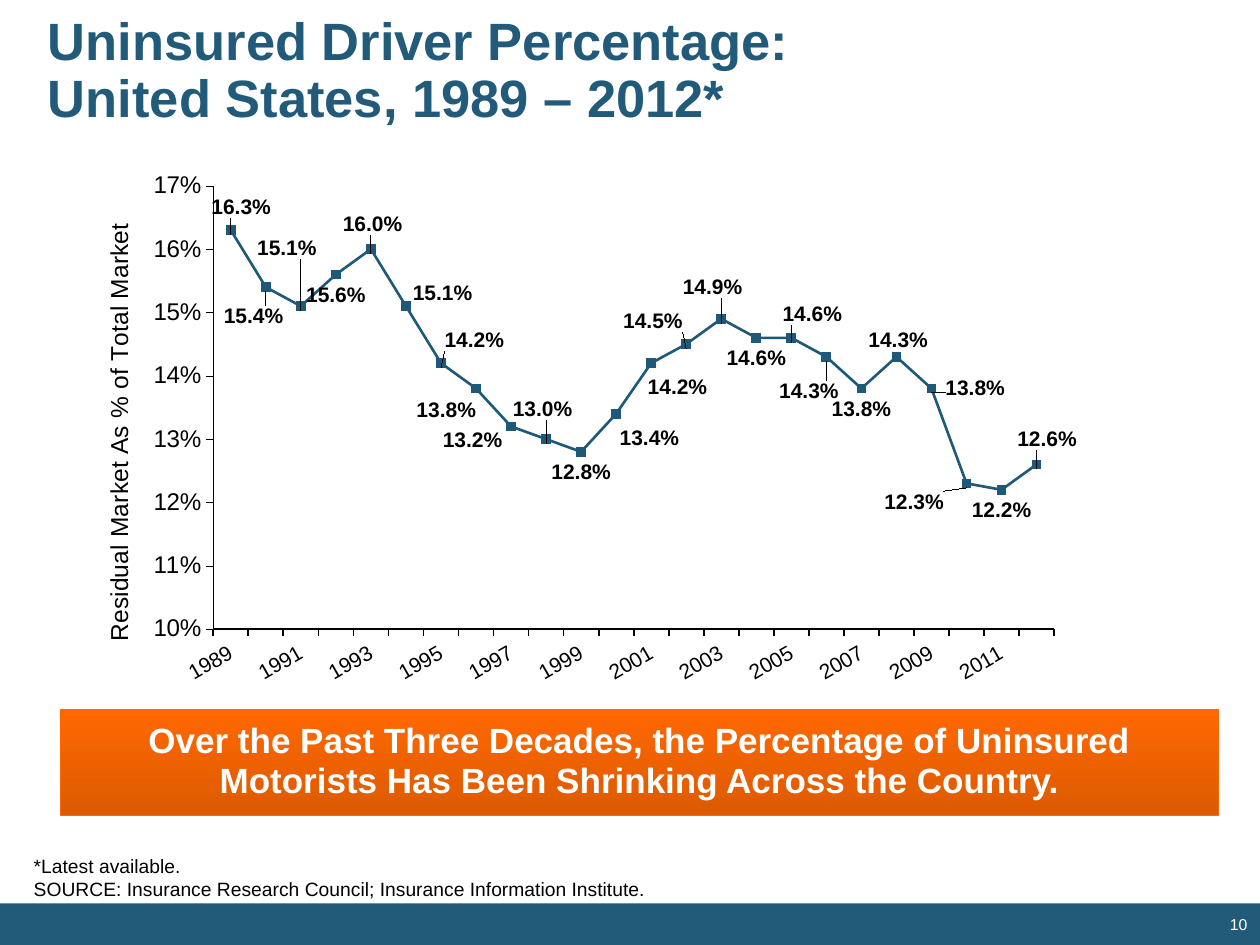
from lxml import etree
from pptx import Presentation
from pptx import util as u
from pptx.chart.data import CategoryChartData
from pptx.dml.color import RGBColor
from pptx.enum import chart as charts, shapes, text
from pptx.oxml import parse_xml
from pptx.oxml.ns import nsdecls, qn

Pt = u.Pt
COLORS = {
    "title": "225A7A", "line": "1F5979", "text": "000000", "white": "FFFFFF",
    "orange": "FF6801", "dark orange": "DC5A01",
}
COLORS = {name: RGBColor.from_string(value) for name, value in COLORS.items()}
CHART_WIDTH, CHART_HEIGHT = 649.4, 331.2


def style(font, size, color, bold=False):
    font.name = "Arial"
    font.size = Pt(size)
    font.bold = bold
    font.color.rgb = COLORS[color]


def layout_xml(**values):
    """Return a manual chart layout, with its values in schema order."""
    items = "".join(f'<c:{tag} val="{value}"/>' for tag, value in values.items())
    return parse_xml(f'<c:layout {nsdecls("c")}><c:manualLayout>{items}'
                     '</c:manualLayout></c:layout>')


presentation = Presentation()
presentation.slide_width, presentation.slide_height = Pt(720), Pt(540)
slide = presentation.slides.add_slide(presentation.slide_layouts[6])

# Footer bar
bar = slide.shapes.add_shape(shapes.MSO_SHAPE.RECTANGLE, Pt(0), Pt(516.3), Pt(720), Pt(23.7))
bar.shadow.inherit = False
bar.fill.solid()
bar.fill.fore_color.rgb = COLORS["title"]
bar.line.fill.background()

# Chart
years = range(1989, 2013)
percentages = [16.3, 15.4, 15.1, 15.6, 16.0, 15.1, 14.2, 13.8, 13.2, 13.0, 12.8, 13.4,
               14.2, 14.5, 14.9, 14.6, 14.6, 14.3, 13.8, 14.3, 13.8, 12.3, 12.2, 12.6]
chart_data = CategoryChartData(number_format="0.0%")
chart_data.categories = [str(year) for year in years]
chart_data.add_series("Series 1", [round(value / 100, 3) for value in percentages])
chart = slide.shapes.add_chart(
    charts.XL_CHART_TYPE.LINE_MARKERS, Pt(23.8), Pt(98.6),
    Pt(CHART_WIDTH), Pt(CHART_HEIGHT), chart_data).chart
chart.has_legend = False
chart.has_title = False
style(chart.font, 11.8, "text")

plot_area = chart.plots[0]._element.getparent()
for old_layout in plot_area.findall(qn("c:layout")):
    plot_area.remove(old_layout)
plot_area.insert(0, layout_xml(layoutTarget="inner", xMode="edge", yMode="edge",
                               x=0.151, y=0.023, w=0.74, h=0.765))

category_axis, value_axis = chart.category_axis, chart.value_axis
for axis, size, line_width in ((category_axis, 12, 1), (value_axis, 13.8, 0.25)):
    axis.has_major_gridlines = False
    axis.major_tick_mark = charts.XL_TICK_MARK.OUTSIDE
    axis.minor_tick_mark = charts.XL_TICK_MARK.NONE
    style(axis.tick_labels.font, size, "text")
    axis.format.line.color.rgb = COLORS["text"]
    axis.format.line.width = Pt(line_width)
category_axis.tick_label_position = charts.XL_TICK_LABEL_POSITION.LOW
category_axis._element.find(qn("c:txPr")).find(qn("a:bodyPr")).set("rot", str(-30 * 60000))
no_multi_level = category_axis._element.find(qn("c:noMultiLvlLbl"))
for tag, step in (("tickLblSkip", 2), ("tickMarkSkip", 1)):
    skip = etree.Element(qn(f"c:{tag}"), val=str(step))
    no_multi_level.addprevious(skip)

value_axis.minimum_scale, value_axis.maximum_scale = 0.1, 0.17
value_axis.major_unit = 0.01
value_axis.tick_labels.number_format = "0%"
value_axis.tick_labels.number_format_is_linked = False
axis_title = value_axis.axis_title
run = axis_title.text_frame.paragraphs[0].add_run()
run.text = "Residual Market As % of Total Market"
style(run.font, 14, "text")
body = axis_title.text_frame._txBody.find(qn("a:bodyPr"))
body.set("rot", str(-90 * 60000))
body.set("vert", "horz")
for old_layout in axis_title._element.findall(qn("c:layout")):
    axis_title._element.remove(old_layout)
axis_title._element.find(qn("c:tx")).addnext(
    layout_xml(xMode="edge", yMode="edge", x=0.05, y=0.08))

series = chart.plots[0].series[0]
series.smooth = False
series.format.line.color.rgb = COLORS["line"]
series.format.line.width = Pt(1.5)
series.marker.style = charts.XL_MARKER_STYLE.SQUARE
series.marker.size = 5
series.marker.format.fill.solid()
series.marker.format.fill.fore_color.rgb = COLORS["title"]
series.marker.format.line.color.rgb = COLORS["line"]

labels = series.data_labels
labels.show_value = True
labels.number_format = "0.0%"
labels.number_format_is_linked = False
labels.position = charts.XL_LABEL_POSITION.BELOW
style(labels.font, 12, "text", bold=True)

# Shift of each moved label from its place below the marker, in points
label_shifts = {
    1989: (6, -25), 1990: (-7, 5), 1991: (-8, -45), 1993: (1, -26), 1994: (21, -19),
    1995: (19, -25), 1996: (-17, 1), 1997: (-22, -4), 1998: (-2, -29), 2000: (19, 2),
    2001: (15, 2), 2002: (-19, -25), 2003: (-5, -30), 2005: (12, -25), 2006: (-10, 8),
    2008: (1, -21), 2009: (25, -12), 2010: (-30, -1), 2012: (6, -26),
}
for year, (right, down) in label_shifts.items():
    label = series.points[years.index(year)].data_label
    style(label.font, 12, "text", bold=True)
    label.position = charts.XL_LABEL_POSITION.BELOW
    label_element = label._get_or_add_dLbl()
    label_element.find(qn("c:idx")).addnext(
        layout_xml(x=round(right / CHART_WIDTH, 4), y=round(down / CHART_HEIGHT, 4)))

# Banner
banner = slide.shapes.add_shape(shapes.MSO_SHAPE.RECTANGLE,
                                Pt(34.6), Pt(405.6), Pt(661.7), Pt(60.4))
banner.shadow.inherit = False
banner.fill.gradient()
banner.fill.gradient_angle = 270
for stop, position, color in zip(banner.fill.gradient_stops, (0, 1), ("orange", "dark orange")):
    stop.position = position
    stop.color.rgb = COLORS[color]
banner.line.color.rgb = COLORS["orange"]
banner.line.width = Pt(1)

# Text: shape, insets, anchor, alignment, line spacing, size, colour, bold, paragraphs
title = slide.shapes.add_textbox(Pt(23.8), Pt(7.2), Pt(582.5), Pt(67.7))
page_number = slide.shapes.add_textbox(Pt(677.5), Pt(524.2), Pt(35.3), Pt(9.4))
source = slide.shapes.add_textbox(Pt(12.2), Pt(484.6), Pt(605.5), Pt(33.8))
anchors, aligns = text.MSO_ANCHOR, text.PP_ALIGN
texts = [
    (title, (3.6, 3.6, 3.6, 3.6), anchors.MIDDLE, aligns.LEFT, 0.9, 30, "title", True,
     ["Uninsured Driver Percentage:\nUnited States, 1989 – 2012*"]),
    (banner, (7.2, 3.6, 7.2, 5), anchors.MIDDLE, aligns.CENTER, 0.95, 20, "white", True,
     ["Over the Past Three Decades, the Percentage of Uninsured "
      "Motorists Has Been Shrinking Across the Country."]),
    (page_number, (0, 0, 0, 0), anchors.TOP, aligns.RIGHT, 0.85, 9, "white", False, ["10"]),
    (source, (7.2, 3.6, 7.2, 3.6), anchors.TOP, aligns.LEFT, 1.0, 11, "text", False,
     ["*Latest available.",
      "SOURCE: Insurance Research Council; Insurance Information Institute."]),
]
for shape, insets, anchor, align, spacing, size, color, bold, paragraphs in texts:
    frame = shape.text_frame
    frame.word_wrap = True
    frame.vertical_anchor = anchor
    (frame.margin_left, frame.margin_top,
     frame.margin_right, frame.margin_bottom) = map(Pt, insets)
    for index, content in enumerate(paragraphs):
        paragraph = frame.add_paragraph() if index else frame.paragraphs[0]
        paragraph.alignment = align
        paragraph.line_spacing = spacing
        for line_index, line in enumerate(content.split("\n")):
            if line_index:
                paragraph.add_line_break()
            run = paragraph.add_run()
            run.text = line
            style(run.font, size, color, bold)

presentation.save("out.pptx")
